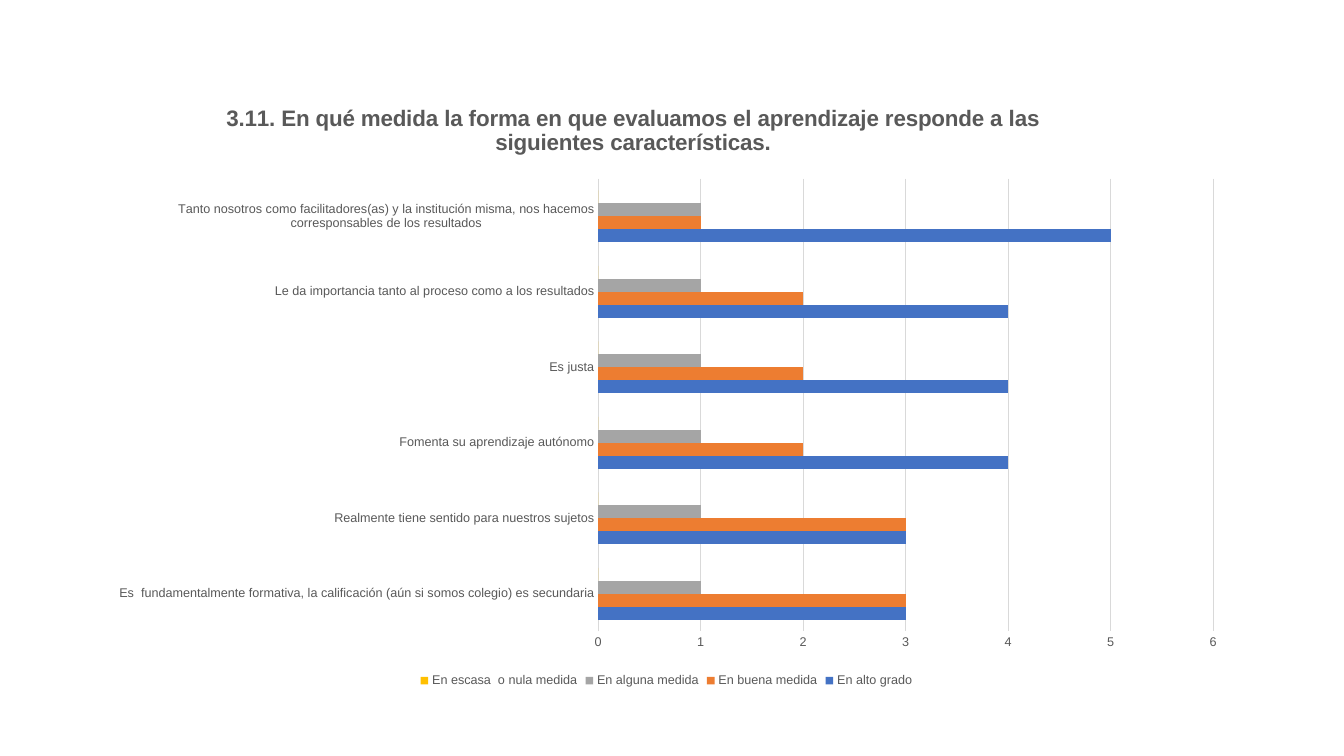
"""Build a slide with one clustered bar chart on how learning is assessed."""
from lxml import etree
from pptx import Presentation
from pptx.chart.data import CategoryChartData
from pptx.dml.color import RGBColor
from pptx.enum.chart import XL_CHART_TYPE, XL_LEGEND_POSITION, XL_TICK_MARK
from pptx.oxml.ns import qn
from pptx.util import Pt

BAR = XL_CHART_TYPE.BAR_CLUSTERED
BOTTOM = XL_LEGEND_POSITION.BOTTOM
NO_TICK = XL_TICK_MARK.NONE
SCALE = 914400 / 100.8
THEME = {
    "font": "Arial",
    "text": RGBColor.from_string("595959"),
    "line": RGBColor.from_string("D9D9D9"),
    "title": Pt(16),
    "label": Pt(9),
    "rule": Pt(0.75),
}
TITLE = ("3.11. En qué medida la forma en que evaluamos el aprendizaje "
         "responde a las siguientes características.")
TRAITS = [
    "Es  fundamentalmente formativa, la calificación (aún si somos colegio) es secundaria",
    "Realmente tiene sentido para nuestros sujetos",
    "Fomenta su aprendizaje autónomo",
    "Es justa",
    "Le da importancia tanto al proceso como a los resultados",
    "Tanto nosotros como facilitadores(as) y la institución misma, "
    "nos hacemos corresponsables de los resultados",
]
GRADES = [
    ("En alto grado", [3, 3, 4, 4, 4, 5], "4472C4"),
    ("En buena medida", [3, 3, 2, 2, 2, 1], "ED7D31"),
    ("En alguna medida", [1] * 6, "A5A5A5"),
    ("En escasa  o nula medida", [0] * 6, "FFC000"),
]


def write(frame, text, **form):
    """Put text in a frame and format its run."""
    run = frame.paragraphs[0].add_run()
    run.text = text
    run.font.name = THEME["font"]
    run.font.size = form["size"]
    run.font.bold = form["bold"]
    run.font.color.rgb = form["color"]


def place(part, index, **spots):
    """Give a chart part a manual layout."""
    for old in part.findall(qn("c:layout")):
        part.remove(old)
    layout = etree.Element(qn("c:layout"))
    part.insert(index, layout)
    manual = etree.SubElement(layout, qn("c:manualLayout"))
    for tag, value in spots.items():
        etree.SubElement(manual, qn("c:" + tag)).set("val", str(value))


deck = Presentation()
deck.slide_width, deck.slide_height = round(1344 * SCALE), round(756 * SCALE)
slide = deck.slides.add_slide(deck.slide_layouts[6])

data = CategoryChartData()
data.categories = TRAITS
for name, values, _ in GRADES:
    data.add_series(name, values)
box = [round(px * SCALE) for px in (97, 88, 1139, 604)]
chart = slide.shapes.add_chart(BAR, *box, data).chart
chart.font.name = THEME["font"]
chart.font.size = THEME["label"]
chart.font.color.rgb = THEME["text"]

chart.has_title = True
title = chart.chart_title
title.include_in_layout = False
write(title.text_frame, TITLE, size=THEME["title"], bold=True, color=THEME["text"])
place(title._element, 1, xMode="edge", yMode="edge", x=0.11, y=0.02)

plot = chart.plots[0]
plot.gap_width = 182
plot.overlap = 0
plot.vary_by_categories = False
for series, (_, _, color) in zip(plot.series, GRADES):
    series.format.fill.solid()
    series.format.fill.fore_color.rgb = RGBColor.from_string(color)
area = chart._chartSpace.find(".//" + qn("c:plotArea"))
place(area, 0, layoutTarget="inner", xMode="edge", yMode="edge",
      x=0.44, y=0.15, w=0.54, h=0.75)

traits, scale = chart.category_axis, chart.value_axis
for axis in (traits, scale):
    axis.major_tick_mark = axis.minor_tick_mark = NO_TICK
    axis.tick_labels.font.size = THEME["label"]
    axis.tick_labels.font.color.rgb = THEME["text"]
scale.minimum_scale, scale.maximum_scale, scale.major_unit = 0, 6, 1
scale.has_major_gridlines = True
scale.format.line.fill.background()
for line in (traits.format.line, scale.major_gridlines.format.line):
    line.color.rgb = THEME["line"]
    line.width = THEME["rule"]

chart.has_legend = True
legend = chart.legend
legend.position = BOTTOM
legend.include_in_layout = False
legend.font.size = THEME["label"]
legend.font.color.rgb = THEME["text"]

deck.save("out.pptx")
